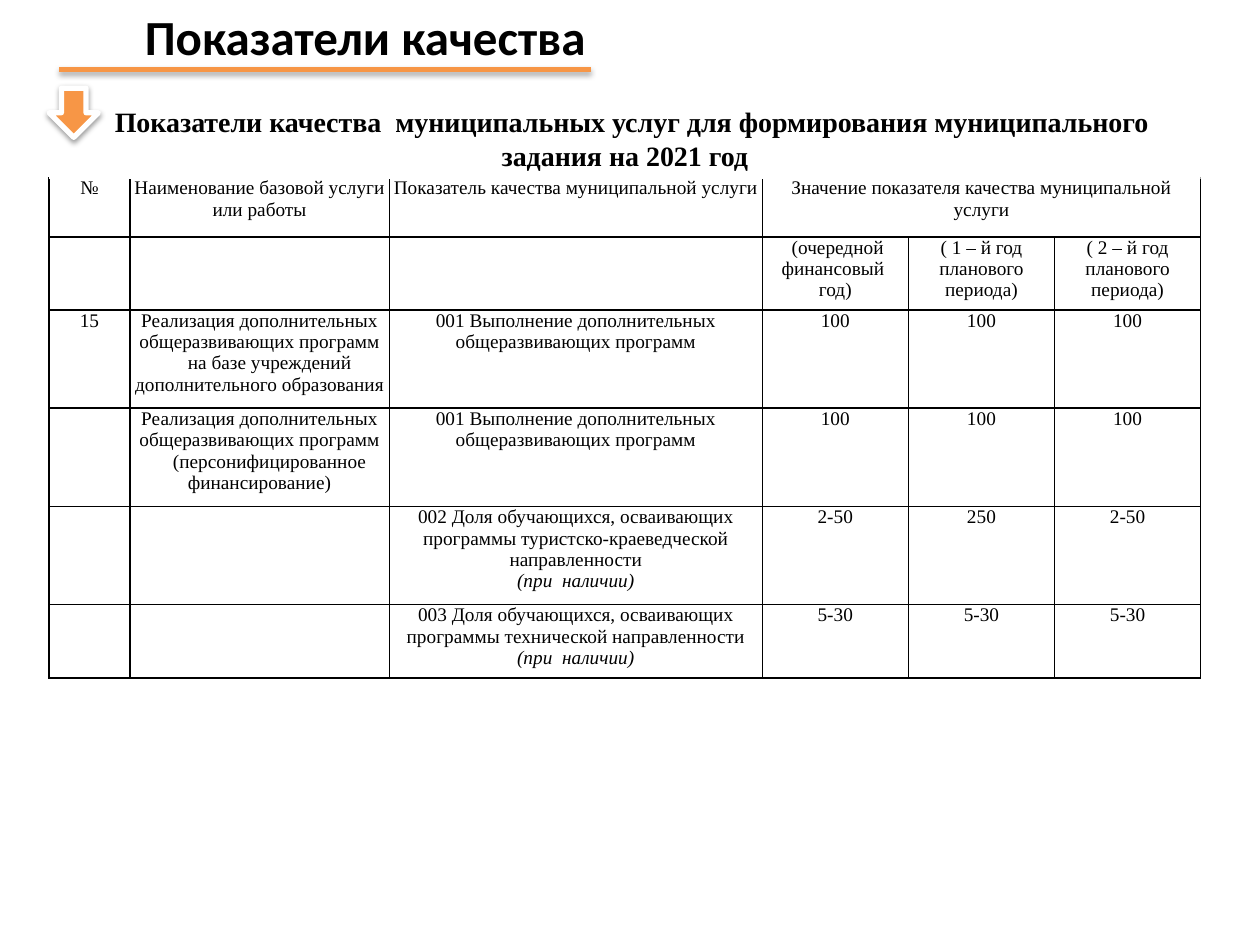
from dataclasses import dataclass

from lxml.etree import SubElement
from pptx import Presentation
from pptx.dml.color import RGBColor
from pptx.enum.shapes import MSO_CONNECTOR as Connector, MSO_SHAPE as Shape
from pptx.enum.text import MSO_ANCHOR as Anchor, PP_ALIGN as Align
from pptx.oxml.ns import qn
from pptx.util import Inches, Pt

SERIF = "Times New Roman"
BLACK, WHITE, ORANGE = "000000", "FFFFFF", "F79646"
LEFT, WIDTH = 0.39, 9.14
COLUMN_WIDTHS = [0.64, 2.06, 2.96, 1.16, 1.16, 1.16]
ROW_HEIGHTS = [0.47, 0.58, 0.78, 0.78, 0.78, 0.58]


@dataclass
class Line:
    """One paragraph of a table cell."""
    text: str
    indent: float = 0
    italic: bool = False


@dataclass
class Shadow:
    opacity: int
    blur: float
    distance: float


PROGRAMS = Line("Реализация дополнительных общеразвивающих программ")
COMPLETION = Line("001 Выполнение дополнительных общеразвивающих программ")
IF_ANY = Line("(при  наличии)", italic=True)

TABLE_ROWS: list[list[list[Line]]] = [
    [[Line("№")], [Line("Наименование базовой услуги или работы")],
     [Line("Показатель качества муниципальной услуги")],
     [Line("Значение показателя качества муниципальной услуги")], [], []],
    [[], [], [], [Line(" (очередной финансовый  год)")],
     [Line("( 1 – й год планового периода)")],
     [Line("( 2 – й год планового периода)")]],
    [[Line("15")],
     [PROGRAMS, Line("на базе учреждений дополнительного образования", 0.16)],
     [COMPLETION], *[[Line("100")]] * 3],
    [[], [PROGRAMS, Line("(персонифицированное финансирование)", 0.16)],
     [COMPLETION], *[[Line("100")]] * 3],
    [[], [],
     [Line("002 Доля обучающихся, осваивающих программы "
           "туристско-краеведческой направленности"), IF_ANY],
     [Line("2-50")], [Line("250")], [Line("2-50")]],
    [[], [],
     [Line("003 Доля обучающихся, осваивающих программы "
           "технической направленности"), IF_ANY],
     *[[Line("5-30")]] * 3],
]


def paint(color_format, color: str) -> None:
    color_format.rgb = RGBColor.from_string(color)


def fill(target, color: str) -> None:
    target.fill.solid()
    paint(target.fill.fore_color, color)


def set_font(paragraph, name: str, size: float, bold: bool = False,
             italic: bool = False) -> None:
    values = {"name": name, "size": Pt(size), "bold": bold, "italic": italic}
    for attribute, value in values.items():
        setattr(paragraph.font, attribute, value)
    paint(paragraph.font.color, BLACK)


def indent_first_line(paragraph, inches: float) -> None:
    properties = paragraph._p.get_or_add_pPr()
    properties.set("marL", "0")
    properties.set("indent", str(Inches(inches)))


def set_line(shape, color: str, width: float) -> None:
    paint(shape.line.color, color)
    shape.line.width = Pt(width)


def add_shadow(shape, shadow: Shadow) -> None:
    """Add a downward shadow; the shape's fill and line must be set already."""
    effects = SubElement(shape._element.spPr, qn("a:effectLst"))
    outer = SubElement(effects, qn("a:outerShdw"), blurRad=str(Pt(shadow.blur)),
                       dist=str(Pt(shadow.distance)), dir="5400000",
                       rotWithShape="0")
    color = SubElement(outer, qn("a:srgbClr"), val=BLACK)
    SubElement(color, qn("a:alpha"), val=str(shadow.opacity * 1000))


def add_borders(cell) -> None:
    properties = cell._tc.get_or_add_tcPr()
    for side in ("lnL", "lnR", "lnT", "lnB"):
        border = SubElement(properties, qn(f"a:{side}"), w=str(Pt(1)))
        solid = SubElement(border, qn("a:solidFill"))
        SubElement(solid, qn("a:srgbClr"), val=BLACK)


def fill_cell(cell, lines: list[Line]) -> None:
    add_borders(cell)
    fill(cell, WHITE)
    cell.margin_left = cell.margin_right = Inches(0.03)
    cell.margin_top = cell.margin_bottom = 0
    for number, line in enumerate(lines):
        frame = cell.text_frame
        paragraph = frame.add_paragraph() if number else frame.paragraphs[0]
        paragraph.text = line.text
        paragraph.alignment = Align.CENTER
        if line.indent:
            indent_first_line(paragraph, line.indent)
        set_font(paragraph, SERIF, 11, italic=line.italic)


def add_title(slide) -> None:
    title = slide.shapes.title
    title.left, title.top = Inches(0.7), Inches(0)
    title.width, title.height = Inches(WIDTH), Inches(0.57)
    frame = title.text_frame
    frame.margin_left = Inches(0.45)
    frame.vertical_anchor = Anchor.TOP
    frame.text = "Показатели качества"
    frame.paragraphs[0].alignment = Align.LEFT
    set_font(frame.paragraphs[0], "Calibri", 28, bold=True)

    underline = slide.shapes.add_connector(
        Connector.STRAIGHT, Inches(0.47), Inches(0.55), Inches(4.69), Inches(0.55))
    set_line(underline, ORANGE, 3)
    add_shadow(underline, Shadow(35, 3.1, 1.8))


def add_quality_table(slide) -> None:
    table = slide.shapes.add_table(
        len(ROW_HEIGHTS), len(COLUMN_WIDTHS), Inches(LEFT), Inches(1.41),
        Inches(WIDTH), Inches(sum(ROW_HEIGHTS))).table
    table.first_row = table.horz_banding = False
    for column, width in zip(table.columns, COLUMN_WIDTHS):
        column.width = Inches(width)
    for row, height, contents in zip(table.rows, ROW_HEIGHTS, TABLE_ROWS):
        row.height = Inches(height)
        for cell, lines in zip(row.cells, contents):
            fill_cell(cell, lines)
    table.cell(0, 3).merge(table.cell(0, 5))


def add_subtitle(slide) -> None:
    subtitle = slide.shapes.add_shape(
        Shape.RECTANGLE, Inches(LEFT), Inches(0.78), Inches(WIDTH), Inches(0.64))
    fill(subtitle, WHITE)
    subtitle.line.fill.background()
    subtitle.shadow.inherit = False
    frame = subtitle.text_frame
    frame.word_wrap = True
    frame.vertical_anchor = Anchor.MIDDLE
    frame.text = ("Показатели качества  муниципальных услуг для формирования "
                  "муниципального задания на 2021 год")
    heading = frame.paragraphs[0]
    heading.alignment = Align.CENTER
    indent_first_line(heading, 0.11)
    set_font(heading, SERIF, 16, bold=True)


def add_arrow(slide) -> None:
    arrow = slide.shapes.add_shape(
        Shape.DOWN_ARROW, Inches(LEFT), Inches(0.7), Inches(0.39), Inches(0.39))
    fill(arrow, ORANGE)
    set_line(arrow, WHITE, 3)
    add_shadow(arrow, Shadow(38, 3.1, 1.6))


def main() -> None:
    deck = Presentation()
    deck.slide_width, deck.slide_height = Inches(10), Inches(7.5)
    slide = deck.slides.add_slide(deck.slide_layouts.get_by_name("Title Only"))
    add_title(slide)
    add_quality_table(slide)
    add_subtitle(slide)
    add_arrow(slide)
    deck.save("out.pptx")


if __name__ == "__main__":
    main()
